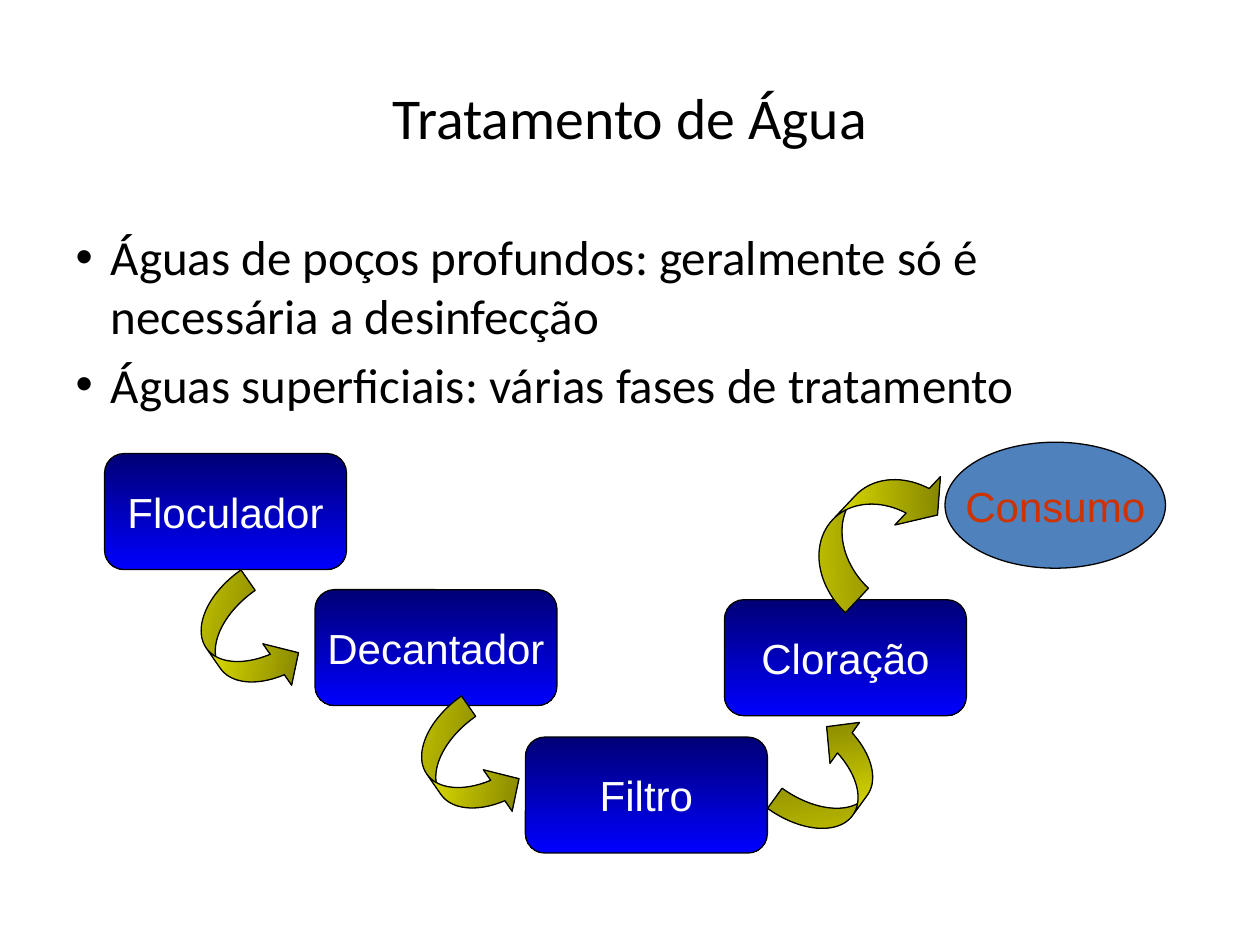
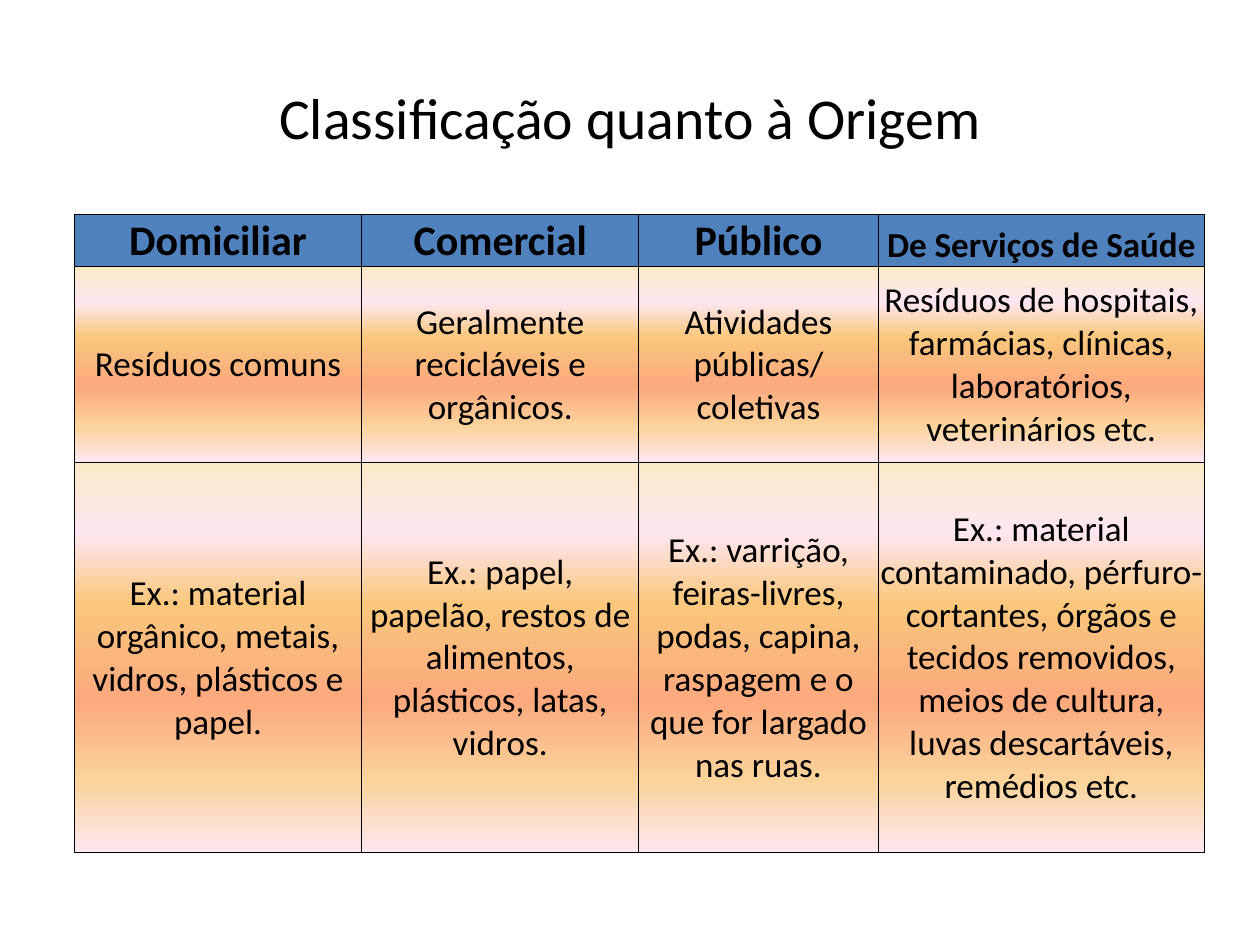
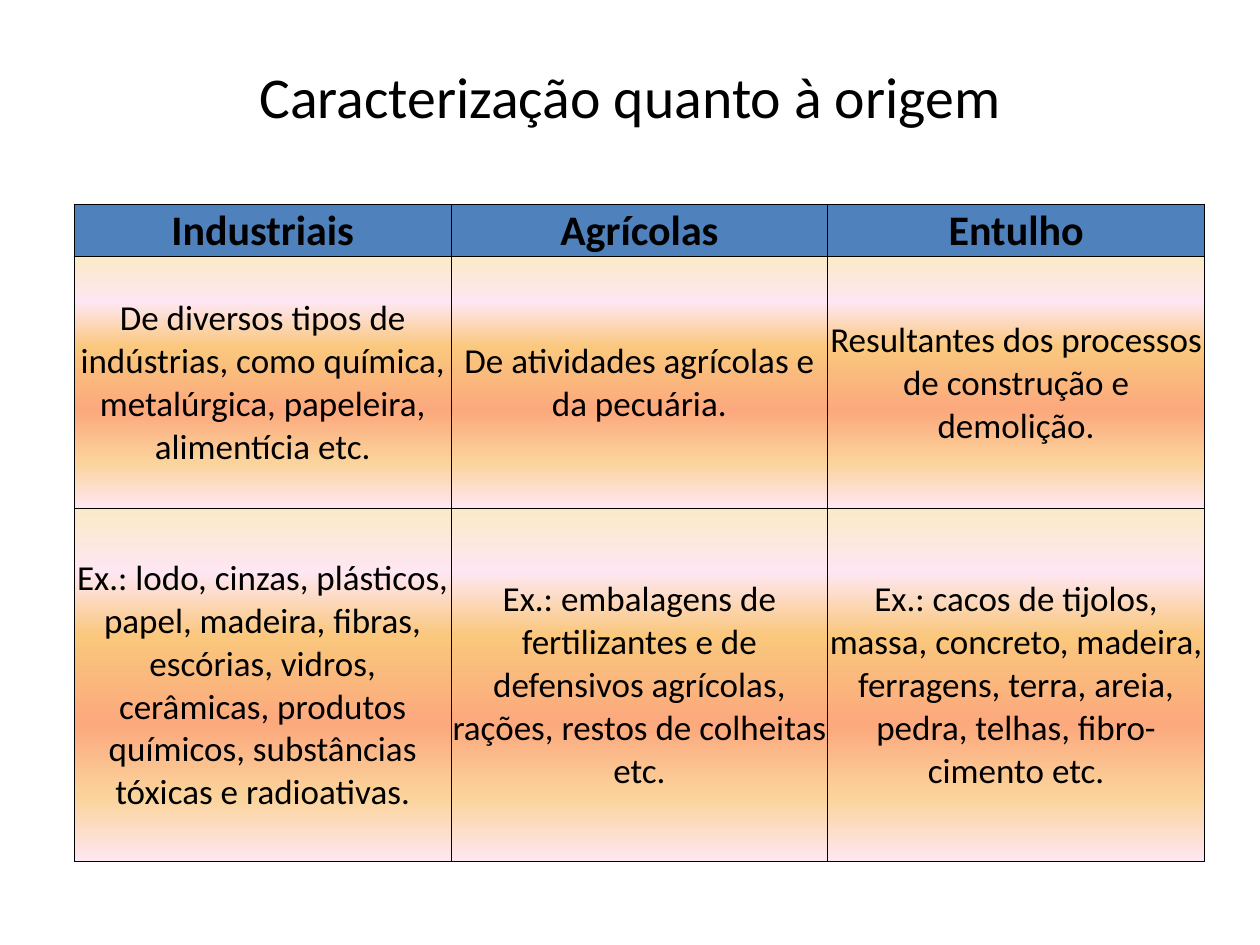
"""Build three slides on water treatment and the classification of waste by origin."""
from dataclasses import dataclass

from lxml.etree import SubElement
from pptx import Presentation
from pptx.dml.color import RGBColor as RGB
from pptx.enum.shapes import MSO_SHAPE as SHAPE
from pptx.enum.text import MSO_ANCHOR as ANCHOR, MSO_AUTO_SIZE as AUTOFIT, PP_ALIGN as ALIGN
from pptx.oxml import parse_xml
from pptx.oxml.ns import nsdecls, qn
from pptx.util import Inches, Pt


@dataclass(frozen=True)
class Theme:
    ink: str = "000000"
    white: str = "FFFFFF"
    blue: str = "4F81BD"
    rust: str = "CC3300"
    tank: tuple = ((0, "000076"), (100, "0000FF"))
    flow: tuple = ((0, "FFFF00"), (100, "767600"))
    sunset: tuple = ((0, "FBEAC7"), (18, "FEE7F2"), (36, "FAC77D"),
                     (61, "FBA97D"), (82, "FBD49C"), (100, "FEE7F2"))
    text_font: str = "Calibri"
    label_font: str = "Arial"
    title_size: int = 33
    body_size: int = 28
    head_size: int = 24
    cell_size: int = 20


theme = Theme()


def write(paragraph, text, size, color=theme.ink, font=theme.text_font, bold=False):
    """Add one formatted run."""
    run = paragraph.add_run()
    run.text = text
    run.font.size, run.font.name, run.font.bold = Pt(size), font, bold
    run.font.color.rgb = RGB.from_string(color)


def paint(fill, element, stops, angle):
    """Fill with a gradient whose angle runs clockwise."""
    fill.gradient()
    fill.gradient_angle = 360 - angle
    stop_list = element.find(".//" + qn("a:gsLst"))
    stop_list.clear()
    for percent, color in stops:
        stop = SubElement(stop_list, qn("a:gs"), pos=str(percent * 1000))
        SubElement(stop, qn("a:srgbClr"), val=color)


prs = Presentation()
prs.slide_width, prs.slide_height = Inches(10), Inches(7.5)

slides = []
for heading, top, layout in (
    ("Tratamento de Água", 0.3, 1),
    ("Classificação quanto à Origem", 0.3, 5),
    ("Caracterização quanto à origem", 0.13, 5),
):
    slide = prs.slides.add_slide(prs.slide_layouts[layout])
    title = slide.shapes.title
    title.left, title.top = Inches(0.5), Inches(top)
    title.width, title.height = Inches(9), Inches(1.25)
    title.text_frame.auto_size = AUTOFIT.NONE
    title.text_frame.vertical_anchor = ANCHOR.MIDDLE
    title.text_frame.paragraphs[0].alignment = ALIGN.CENTER
    write(title.text_frame.paragraphs[0], heading, theme.title_size)
    slides.append(slide)
treatment, *classifications = slides

sources = treatment.placeholders[1]
sources.left, sources.top = Inches(0.5), Inches(1.75)
sources.width, sources.height = Inches(9), Inches(4.95)
sources.text_frame.auto_size = AUTOFIT.NONE
for number, text in enumerate((
    "Águas de poços profundos: geralmente só é necessária a desinfecção",
    "Águas superficiais: várias fases de tratamento",
)):
    item = sources.text_frame.add_paragraph() if number else sources.text_frame.paragraphs[0]
    properties = item._p.get_or_add_pPr()
    properties.set("marL", str(Inches(0.28)))
    properties.set("indent", str(-Inches(0.28)))
    SubElement(properties, qn("a:buChar"), char="•")
    item.space_before = Pt(5.6 * number)
    write(item, text, theme.body_size)

for name, kind, left, top, width, height, color in (
    ("Floculador", SHAPE.ROUNDED_RECTANGLE, 0.83, 3.6, 1.92, 0.92, theme.white),
    ("Decantador", SHAPE.ROUNDED_RECTANGLE, 2.5, 4.68, 1.92, 0.92, theme.white),
    ("Filtro", SHAPE.ROUNDED_RECTANGLE, 4.17, 5.85, 1.92, 0.92, theme.white),
    ("Cloração", SHAPE.ROUNDED_RECTANGLE, 5.75, 4.76, 1.92, 0.92, theme.white),
    ("Consumo", SHAPE.OVAL, 7.5, 3.51, 1.75, 1, theme.rust),
):
    stage = treatment.shapes.add_shape(
        kind, Inches(left), Inches(top), Inches(width), Inches(height))
    stage.shadow.inherit = False
    if kind == SHAPE.OVAL:
        stage.fill.solid()
        stage.fill.fore_color.rgb = RGB.from_string(theme.blue)
    else:
        paint(stage.fill, stage._element, theme.tank, 90)
    stage.line.color.rgb = RGB.from_string(theme.ink)
    stage.line.width = Pt(0.75)
    stage.text_frame.word_wrap = False
    stage.text_frame.vertical_anchor = ANCHOR.MIDDLE
    label = stage.text_frame.paragraphs[0]
    label.alignment = ALIGN.CENTER
    write(label, name, theme.head_size, color, theme.label_font)

side_bend, top_bend = (0.34, 0.69, 0.33), (0.46, 0.91, 0.33)
for kind, left, top, width, height, rotation, bend in (
    (SHAPE.CURVED_RIGHT_ARROW, 1.67, 4.6, 0.58, 1, 325.2, side_bend),
    (SHAPE.CURVED_RIGHT_ARROW, 6.33, 5.68, 0.58, 1, 215.9, side_bend),
    (SHAPE.CURVED_RIGHT_ARROW, 3.42, 5.6, 0.58, 1, 325.2, side_bend),
    (SHAPE.CURVED_DOWN_ARROW, 6.29, 3.89, 1.33, 0.58, 313.3, top_bend),
):
    flow = treatment.shapes.add_shape(
        kind, Inches(left), Inches(top), Inches(width), Inches(height))
    flow.shadow.inherit = False
    flow.rotation = rotation
    for index, amount in enumerate(bend):
        flow.adjustments[index] = amount
    paint(flow.fill, flow._element, theme.flow, 45)
    flow.line.color.rgb = RGB.from_string(theme.ink)
    flow.line.width = Pt(0.75)

origins = (
    ("Domiciliar", "Comercial", "Público", "De Serviços de Saúde"),
    ("Resíduos comuns",
     "Geralmente recicláveis e orgânicos.",
     "Atividades públicas/ coletivas",
     "Resíduos de hospitais, farmácias, clínicas, laboratórios, veterinários etc."),
    ("Ex.: material orgânico, metais, vidros, plásticos e papel.",
     "Ex.: papel, papelão, restos de alimentos, plásticos, latas, vidros.",
     "Ex.: varrição, feiras-livres, podas, capina, raspagem e o que for largado nas ruas.",
     "Ex.: material contaminado, pérfuro-cortantes, órgãos e tecidos removidos, "
     "meios de cultura, luvas descartáveis, remédios etc."),
)
other_origins = (
    ("Industriais", "Agrícolas", "Entulho"),
    ("De diversos tipos de indústrias, como química, metalúrgica, papeleira, alimentícia etc.",
     "De atividades agrícolas e da pecuária.",
     "Resultantes dos processos de construção e demolição."),
    ("Ex.: lodo, cinzas, plásticos, papel, madeira, fibras, escórias, vidros, cerâmicas, "
     "produtos químicos, substâncias tóxicas e radioativas.",
     "Ex.: embalagens de fertilizantes e de defensivos agrícolas, "
     "rações, restos de colheitas etc.",
     "Ex.: cacos de tijolos, massa, concreto, madeira, ferragens, terra, areia, pedra, "
     "telhas, fibro-cimento etc."),
)
for slide, rows, top, widths, heights in (
    (classifications[0], origins, 1.7, (2.28, 2.2, 1.9, 2.59), (0.41, 1.55, 3.1)),
    (classifications[1], other_origins, 1.62, (2.99,) * 3, (0.41, 2, 2.8)),
):
    grid = slide.shapes.add_table(
        len(rows), len(widths), Inches(0.59), Inches(top),
        Inches(sum(widths)), Inches(sum(heights))).table
    grid.first_row = grid.horz_banding = False
    for column, width in zip(grid.columns, widths):
        column.width = Inches(width)
    for row, height in zip(grid.rows, heights):
        row.height = Inches(height)
    for r, texts in enumerate(rows):
        for c, text in enumerate(texts):
            cell = grid.cell(r, c)
            is_head = r == 0
            cell.margin_left = cell.margin_right = cell.margin_top = Inches(0.01)
            cell.margin_bottom = 0
            cell.vertical_anchor = ANCHOR.BOTTOM if is_head else ANCHOR.MIDDLE
            if is_head:
                cell.fill.solid()
                cell.fill.fore_color.rgb = RGB.from_string(theme.blue)
            else:
                paint(cell.fill, cell._tc, theme.sunset, 90)
            for order, side in enumerate(("lnL", "lnR", "lnT", "lnB")):
                cell._tc.get_or_add_tcPr().insert(order, parse_xml(
                    f'<a:{side} {nsdecls("a")} w="{Pt(0.5)}"><a:solidFill>'
                    f'<a:srgbClr val="{theme.ink}"/></a:solidFill></a:{side}>'))
            entry = cell.text_frame.paragraphs[0]
            entry.alignment = ALIGN.CENTER
            is_large = is_head and text != "De Serviços de Saúde"
            write(entry, text, theme.head_size if is_large else theme.cell_size, bold=is_head)

prs.save("out.pptx")
